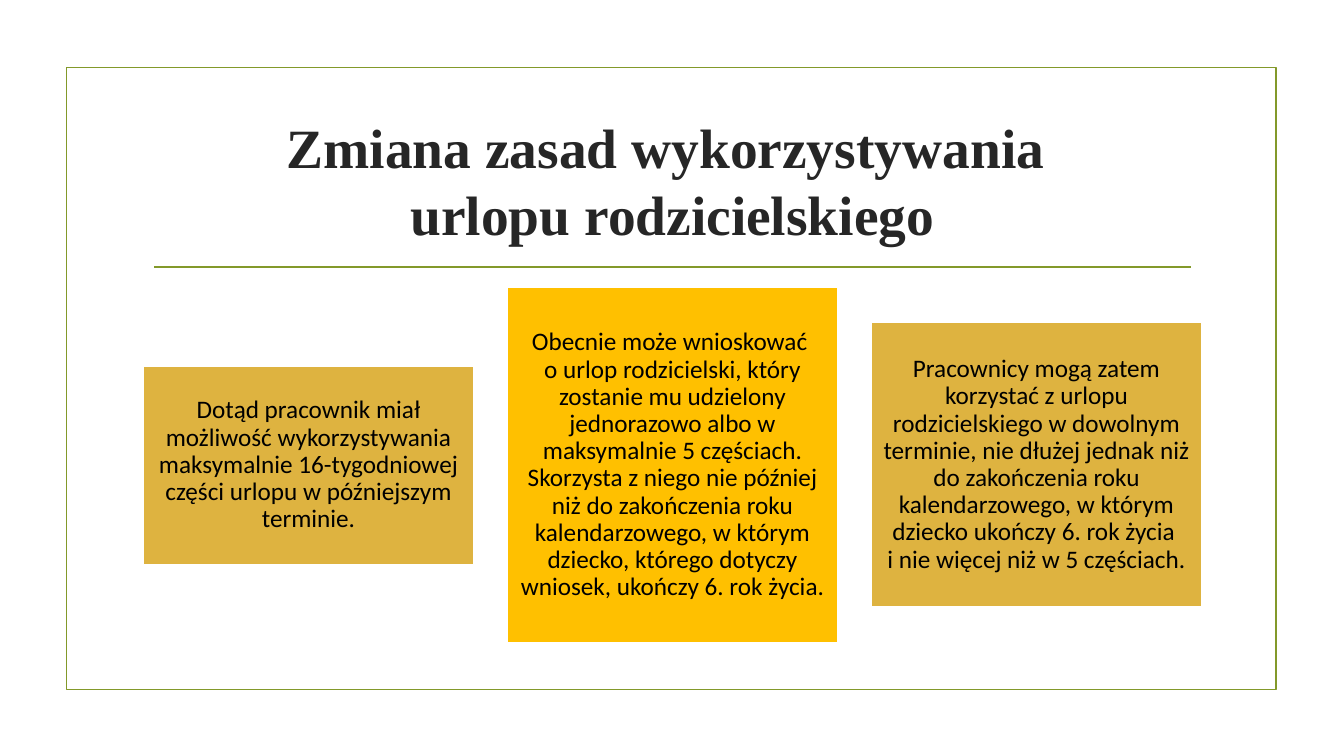
from lxml.etree import SubElement
from pptx import Presentation
from pptx.dml.color import RGBColor
from pptx.enum.shapes import MSO_CONNECTOR, MSO_SHAPE
from pptx.enum.text import MSO_ANCHOR, PP_ALIGN
from pptx.oxml.ns import qn
from pptx.util import Pt

PX = 9144
GREEN = RGBColor(0x83, 0x99, 0x2A)
GOLD = RGBColor(0xDE, 0xB3, 0x40)
AMBER = RGBColor(0xFF, 0xC0, 0x00)
INK = RGBColor(0x26, 0x26, 0x26)
BLACK = RGBColor(0, 0, 0)
WHITE = RGBColor(0xFF, 0xFF, 0xFF)

TITLE = "Zmiana zasad wykorzystywania \vurlopu rodzicielskiego"
CARDS = [
    (197, GOLD, "Dotąd pracownik miał możliwość wykorzystywania maksymalnie "
     "16-tygodniowej części urlopu w późniejszym terminie."),
    (353, AMBER, "Obecnie może wnioskować \vo urlop rodzicielski, który zostanie "
     "mu udzielony jednorazowo albo w maksymalnie 5 częściach. Skorzysta z niego "
     "nie później niż do zakończenia roku kalendarzowego, w którym dziecko, "
     "którego dotyczy wniosek, ukończy 6. rok życia."),
    (282, GOLD, "Pracownicy mogą zatem korzystać z urlopu rodzicielskiego w dowolnym "
     "terminie, nie dłużej jednak niż do zakończenia roku kalendarzowego, w którym "
     "dziecko ukończy 6. rok życia \vi nie więcej niż w 5 częściach."),
]


def px(*lengths):
    """Turn px lengths into EMU."""
    return [length * PX for length in lengths]


def write(shape, text, font_name, size, color, bold=False, spacing=1.0):
    """Put centred, wrapped text into a shape."""
    frame = shape.text_frame
    frame.word_wrap = True
    frame.vertical_anchor = MSO_ANCHOR.MIDDLE
    frame.text = text
    paragraph = frame.paragraphs[0]
    paragraph.alignment = PP_ALIGN.CENTER
    paragraph.line_spacing = spacing
    font = paragraph.font
    font.size = Pt(size)
    for run in paragraph.runs:
        run.font.name = font_name
        run.font.size = Pt(size)
        run.font.bold = bold
        run.font.color.rgb = color


def add_box(slide, left, top, width, height, line_color, fill_color=None):
    """Draw an outlined rectangle, filled if a fill colour is given."""
    box = slide.shapes.add_shape(MSO_SHAPE.RECTANGLE, *px(left, top, width, height))
    box.shadow.inherit = False
    box.line.color.rgb = line_color
    box.line.width = Pt(1.25)
    if fill_color is None:
        box.fill.background()
    else:
        box.fill.solid()
        box.fill.fore_color.rgb = fill_color
    return box


def add_heading(slide, left, top, width, height):
    """Place the title and the rule under it."""
    title = slide.shapes.add_textbox(*px(left, top, width, height))
    write(title, TITLE, "Times New Roman", 39.6, INK, bold=True)
    rule_y = top + height + 15
    rule = slide.shapes.add_connector(
        MSO_CONNECTOR.STRAIGHT, *px(left + 11, rule_y, left + width - 11, rule_y))
    rule.line.color.rgb = GREEN
    rule.line.width = Pt(1.25)
    SubElement(rule._element.spPr, qn("a:effectLst"))


def add_cards(slide, left, top, width, height):
    """Spread the cards evenly across the box, centred vertically."""
    card_width = 328
    step = (width - card_width) // (len(CARDS) - 1)
    for index, (card_height, color, text) in enumerate(CARDS):
        card_top = top + (height - card_height) // 2
        card = add_box(slide, left + index * step, card_top, card_width,
                       card_height, WHITE, color)
        frame = card.text_frame
        frame.margin_left = frame.margin_right = 7 * PX
        frame.margin_top = frame.margin_bottom = 7 * PX
        write(card, text, "Calibri", 18, BLACK, spacing=0.9)


def main():
    """Build the slide and save it."""
    deck = Presentation()
    deck.slide_width, deck.slide_height = px(1333, 750)
    slide = deck.slides.add_slide(deck.slide_layouts[6])
    add_box(slide, 66, 67, 1200, 617, GREEN)
    add_heading(slide, 142, 107, 1050, 143)
    add_cards(slide, 142, 285, 1050, 353)
    deck.save("out.pptx")


if __name__ == "__main__":
    main()
